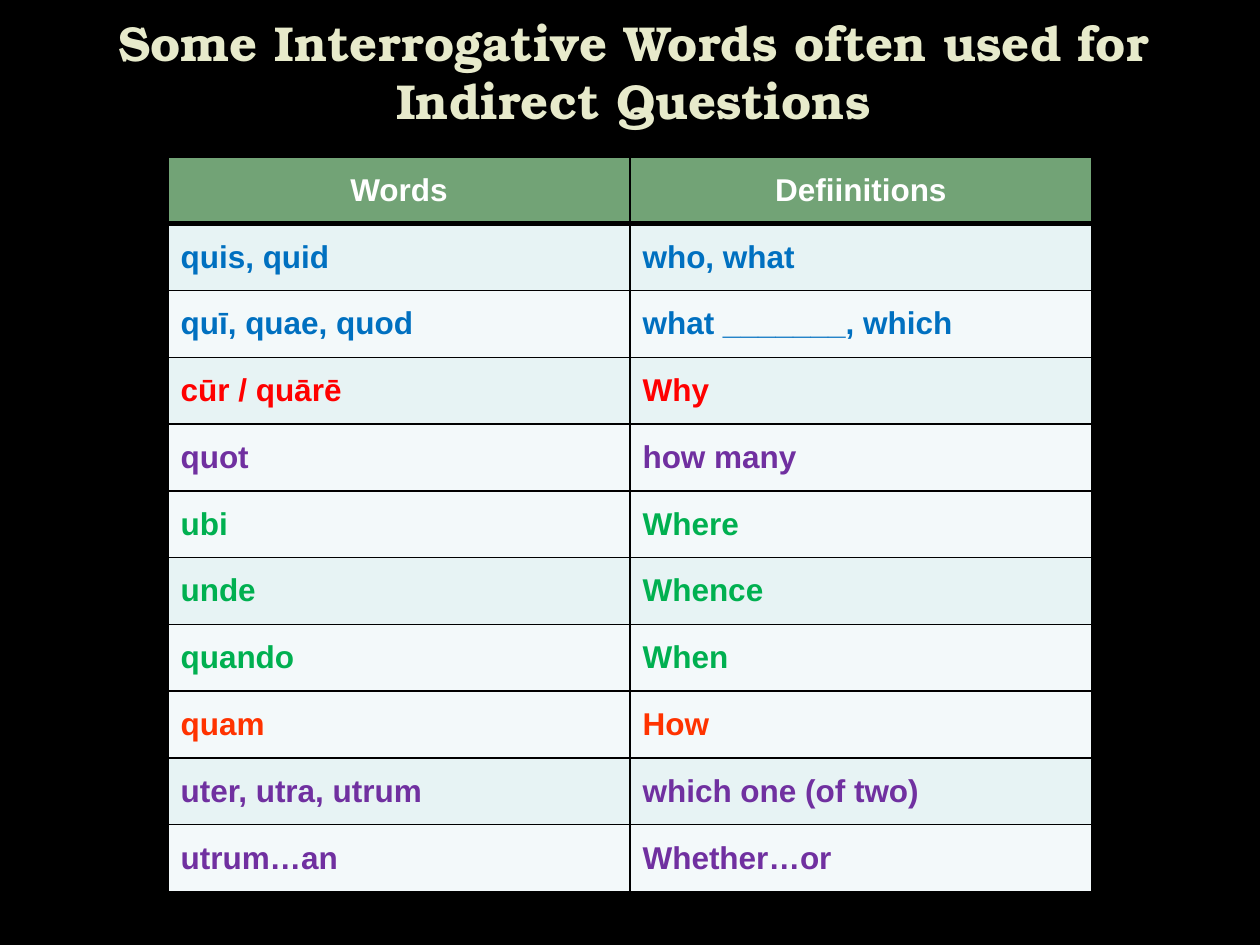
from dataclasses import dataclass

from lxml.etree import SubElement
from pptx import Presentation
from pptx.dml.color import RGBColor
from pptx.enum.text import MSO_ANCHOR, PP_ALIGN
from pptx.oxml.ns import qn
from pptx.slide import Slide
from pptx.table import _Cell
from pptx.text.text import _Paragraph
from pptx.util import Emu, Pt

SCALE = 914400 / 126
BLACK, WHITE, GREEN = "000000", "FFFFFF", "72A376"
DARK, LIGHT = "E7F3F4", "F3F9FA"


@dataclass
class Row:
    word: str
    sense: str
    ink: str
    fill: str


ROWS = [
    Row("Words", "Defiinitions", WHITE, GREEN),
    Row("quis, quid", "who, what", "0070C0", DARK),
    Row("quī, quae, quod", "what _______, which", "0070C0", LIGHT),
    Row("cūr / quārē", "Why", "FF0000", DARK),
    Row("quot", "how many", "7030A0", LIGHT),
    Row("ubi", "Where", "00B050", LIGHT),
    Row("unde", "Whence", "00B050", DARK),
    Row("quando", "When", "00B050", LIGHT),
    Row("quam", "How", "FF3300", LIGHT),
    Row("uter, utra, utrum", "which one (of two)", "7030A0", DARK),
    Row("utrum…an", "Whether…or", "7030A0", LIGHT),
]


def px(size: int) -> Emu:
    return Emu(round(size * SCALE))


def color(value: str) -> RGBColor:
    return RGBColor.from_string(value)


def style(para: _Paragraph, face: str, size: int, ink: str) -> None:
    para.font.name = face
    para.font.size = Pt(size)
    para.font.bold = True
    para.font.color.rgb = color(ink)


def border(cell: _Cell, side: str, width: int) -> None:
    line = SubElement(cell._tc.get_or_add_tcPr(), qn(f"a:ln{side}"), w=str(Pt(width)))
    fill = SubElement(line, qn("a:solidFill"))
    SubElement(fill, qn("a:srgbClr"), val=BLACK)


def draw_title(slide: Slide, text: str) -> None:
    box = slide.shapes.add_textbox(px(63), px(45), px(1134), px(91))
    frame = box.text_frame
    frame.word_wrap = True
    frame.vertical_anchor = MSO_ANCHOR.BOTTOM
    para = frame.paragraphs[0]
    para.text = text
    para.alignment = PP_ALIGN.CENTER
    para._p.get_or_add_pPr().set("marL", str(px(7)))
    style(para, "TeX Gyre Bonum", 28, "E7EACB")


def draw_cell(cell: _Cell, text: str, row: Row, index: int) -> None:
    cell.vertical_anchor = MSO_ANCHOR.MIDDLE
    para = cell.text_frame.paragraphs[0]
    para.text = text
    if index == 0:
        para.alignment = PP_ALIGN.CENTER
    style(para, "Arial", 18, row.ink)
    border(cell, "L", 1)
    border(cell, "R", 1)
    border(cell, "T", 3 if index == 1 else 1)
    border(cell, "B", 3 if index == 0 else 1)
    cell.fill.solid()
    cell.fill.fore_color.rgb = color(row.fill)


def draw_table(slide: Slide, rows: list[Row]) -> None:
    frame = slide.shapes.add_table(len(rows), 2, px(168), px(157), px(924), px(735))
    for index, row in enumerate(rows):
        for col, text in enumerate((row.word, row.sense)):
            draw_cell(frame.table.cell(index, col), text, row, index)


def main() -> None:
    deck = Presentation()
    deck.slide_width, deck.slide_height = px(1260), px(945)
    slide = deck.slides.add_slide(deck.slide_layouts[6])
    slide.background.fill.solid()
    slide.background.fill.fore_color.rgb = color(BLACK)
    draw_title(slide, "Some Interrogative Words often used for Indirect Questions")
    draw_table(slide, ROWS)
    deck.save("out.pptx")


if __name__ == "__main__":
    main()
